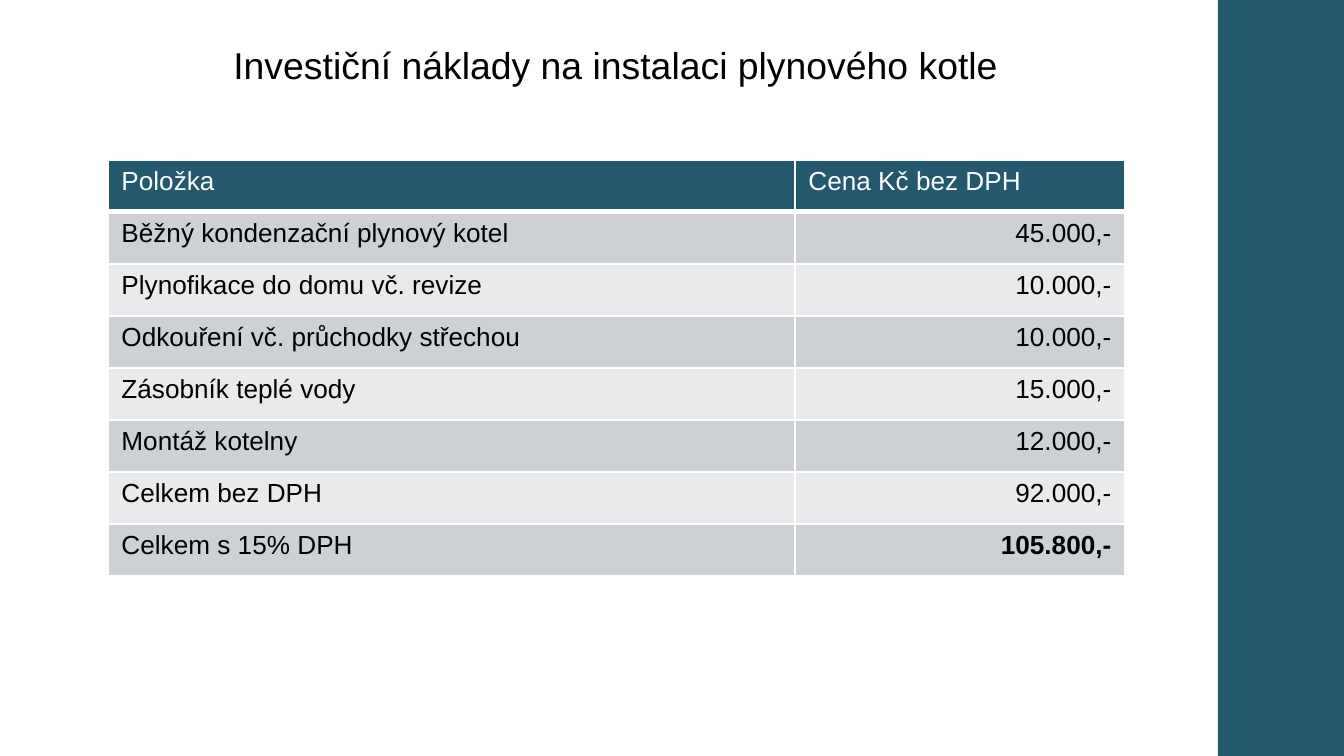
from lxml import etree
from pptx import Presentation
from pptx.dml.color import RGBColor
from pptx.enum.shapes import MSO_SHAPE
from pptx.enum.text import MSO_ANCHOR, PP_ALIGN
from pptx.oxml.ns import qn
from pptx.util import Pt

PX = 6804  # EMU in one px, 134.4 px to the inch
COLORS = {
    "teal": "22596F",
    "band_dark": "CDD1D5",
    "band_light": "E8EAEB",
    "white": "FFFFFF",
    "black": "000000",
}
ROWS = [
    ("Položka", "Cena Kč bez DPH"),
    ("Běžný kondenzační plynový kotel", "45.000,-"),
    ("Plynofikace do domu vč. revize", "10.000,-"),
    ("Odkouření vč. průchodky střechou", "10.000,-"),
    ("Zásobník teplé vody", "15.000,-"),
    ("Montáž kotelny", "12.000,-"),
    ("Celkem bez DPH", "92.000,-"),
    ("Celkem s 15% DPH", "105.800,-"),
]
COLUMN_WIDTHS = [687, 330]
ROW_HEIGHT = 52


def format_text(paragraph, size, color, alignment, bold=False):
    paragraph.alignment = alignment
    values = {"name": "Arial", "size": Pt(size), "bold": bold}
    for name, value in values.items():
        setattr(paragraph.font, name, value)
    paragraph.font.color.rgb = RGBColor.from_string(COLORS[color])


def add_borders(cell, bottom_width):
    properties = cell._tc.get_or_add_tcPr()
    widths = {"lnL": 1, "lnR": 1, "lnT": 1, "lnB": bottom_width}
    for position, (side, width) in enumerate(widths.items()):
        line = etree.Element(qn(f"a:{side}"), w=str(Pt(width)))
        fill = etree.SubElement(line, qn("a:solidFill"))
        etree.SubElement(fill, qn("a:srgbClr"), val=COLORS["white"])
        properties.insert(position, line)


presentation = Presentation()
presentation.slide_width = 1344 * PX
presentation.slide_height = 756 * PX
slide = presentation.slides.add_slide(presentation.slide_layouts[5])

# Side band
band = slide.shapes.add_shape(
    MSO_SHAPE.RECTANGLE, 1218 * PX, 0, 126 * PX, 756 * PX)
band.shadow.inherit = False
band.fill.solid()
band.fill.fore_color.rgb = RGBColor.from_string(COLORS["teal"])
band.line.fill.background()

# Title
title = slide.shapes.title
frame = {"left": 20, "top": 35, "width": 1192, "height": 99}
for name, value in frame.items():
    setattr(title, name, value * PX)
title.text_frame.text = "Investiční náklady na instalaci plynového kotle"
title.text_frame.vertical_anchor = MSO_ANCHOR.TOP
format_text(title.text_frame.paragraphs[0], 20, "black", PP_ALIGN.CENTER)

# Cost table
table = slide.shapes.add_table(
    len(ROWS), len(COLUMN_WIDTHS), 108 * PX, 160 * PX,
    sum(COLUMN_WIDTHS) * PX, len(ROWS) * ROW_HEIGHT * PX).table
for column, width in zip(table.columns, COLUMN_WIDTHS):
    column.width = width * PX

for row_index, texts in enumerate(ROWS):
    is_header = row_index == 0
    is_total = row_index == len(ROWS) - 1
    if is_header:
        fill_color = "teal"
    else:
        fill_color = "band_dark" if row_index % 2 else "band_light"
    for column_index, text in enumerate(texts):
        is_price = column_index == 1 and not is_header
        cell = table.cell(row_index, column_index)
        cell.text = text
        cell.fill.solid()
        cell.fill.fore_color.rgb = RGBColor.from_string(COLORS[fill_color])
        add_borders(cell, 3 if is_header else 1)
        format_text(
            cell.text_frame.paragraphs[0], 14,
            "white" if is_header else "black",
            PP_ALIGN.RIGHT if is_price else PP_ALIGN.LEFT,
            bold=is_price and is_total)

presentation.save("out.pptx")
